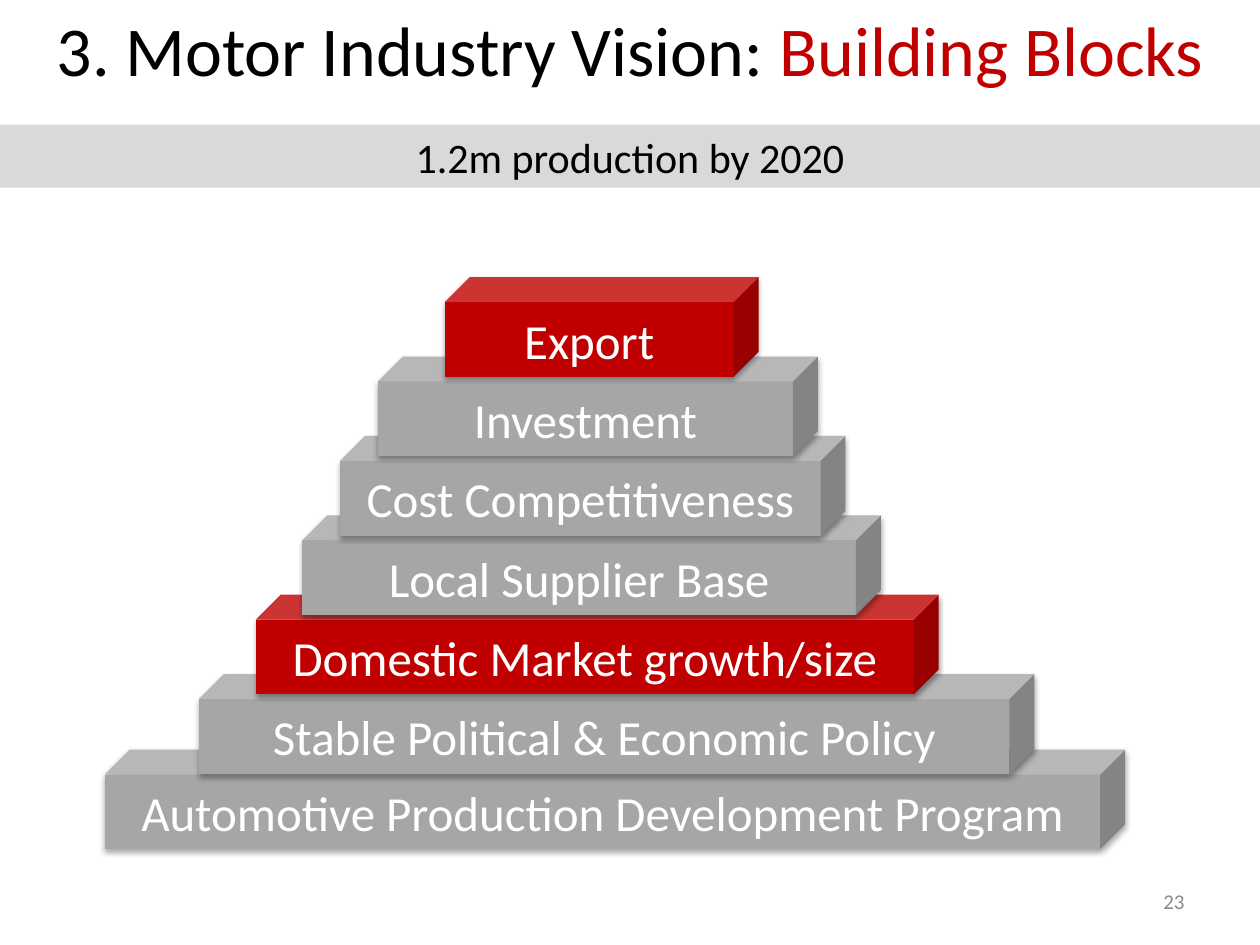
from lxml import etree
from pptx import Presentation
from pptx import util as u
from pptx.dml.color import RGBColor
from pptx.enum import shapes, text
from pptx.oxml.ns import qn

THEME = {
    "font": "Calibri",
    "black": "000000", "white": "FFFFFF", "red": "C00000",
    "block": "A6A6A6", "band": "D9D9D9", "number": "8C8C8C",
    "title_size": 40, "block_size": 28, "band_size": 24, "number_size": 12,
}


def style_text(box, size, colors, align, anchor):
    """Format a one-paragraph frame; colors holds one name per run."""
    frame = box.text_frame
    frame.word_wrap = True
    frame.vertical_anchor = anchor
    para = frame.paragraphs[0]
    para.alignment = align
    for span, color in zip(para.runs, colors):
        span.font.name = THEME["font"]
        span.font.size = u.Pt(THEME[size])
        span.font.color.rgb = RGBColor.from_string(THEME[color])


def add_filled(parent, kind, left, top, width, height, fill):
    """Add a preset shape, in inches, with a plain fill and no outline."""
    shape = parent.add_shape(kind, *(u.Inches(n) for n in (left, top, width, height)))
    shape.shadow.inherit = False
    shape.fill.solid()
    shape.fill.fore_color.rgb = RGBColor.from_string(THEME[fill])
    shape.line.fill.background()
    return shape


deck = Presentation()
deck.slide_width, deck.slide_height = u.Inches(10), u.Inches(7.5)
page = deck.slides.add_slide(deck.slide_layouts[5])
CENTER, MIDDLE = text.PP_ALIGN.CENTER, text.MSO_ANCHOR.MIDDLE

# Title in two colours
title = page.shapes.title
title.left, title.top = 0, 0
title.width, title.height = deck.slide_width, u.Inches(0.94)
title.text_frame.text = "3. Motor Industry Vision: "
title.text_frame.paragraphs[0].add_run().text = "Building Blocks"
title.text_frame.auto_size = text.MSO_AUTO_SIZE.NONE
style_text(title, "title_size", ["black", "red"], CENTER, text.MSO_ANCHOR.TOP)

# Pyramid of blocks, from the base up: label, left, width, fill
blocks = [
    ("Automotive Production Development Program", 0.83, 8.1, "block"),
    ("Stable Political & Economic Policy", 1.58, 6.63, "block"),
    ("Domestic Market growth/size", 2.03, 5.42, "red"),
    ("Local Supplier Base", 2.4, 4.59, "block"),
    ("Cost Competitiveness", 2.7, 4.01, "block"),
    ("Investment", 3, 3.49, "block"),
    ("Export", 3.53, 2.49, "red"),
]
ROW_HEIGHT, ROW_STEP, PEAK, BASE = 0.79, 0.63, 2.2, 5.95
pyramid = page.shapes.add_group_shape()
for row, (label, left, width, fill) in enumerate(blocks):
    top = min(BASE, PEAK + ROW_STEP * (len(blocks) - 1 - row))
    cube = add_filled(pyramid.shapes, shapes.MSO_SHAPE.CUBE,
                      left, top, width, ROW_HEIGHT, fill)
    cube.adjustments[0] = 0.25
    cube.text_frame.text = label
    style_text(cube, "block_size", ["white"], CENTER, MIDDLE)

    # Soft shadow straight below the block
    effects = cube._element.spPr.find(qn("a:effectLst"))
    shadow = etree.SubElement(effects, qn("a:outerShdw"), blurRad=str(u.Pt(3.1)),
                              dist=str(u.Pt(1.8)), dir="5400000", rotWithShape="0")
    color = etree.SubElement(shadow, qn("a:srgbClr"), val=THEME["black"])
    etree.SubElement(color, qn("a:alpha"), val="35000")

# Target band across the page
band = add_filled(page.shapes, shapes.MSO_SHAPE.RECTANGLE, 0, 0.99, 10, 0.5, "band")
band.text_frame.text = "1.2m production by 2020"
style_text(band, "band_size", ["black"], CENTER, MIDDLE)

# Page number
number = page.shapes.add_textbox(u.Inches(7.17), u.Inches(6.95),
                                 u.Inches(2.33), u.Inches(0.4))
number.text_frame.text = "23"
style_text(number, "number_size", ["number"], text.PP_ALIGN.RIGHT, MIDDLE)

deck.save("out.pptx")
